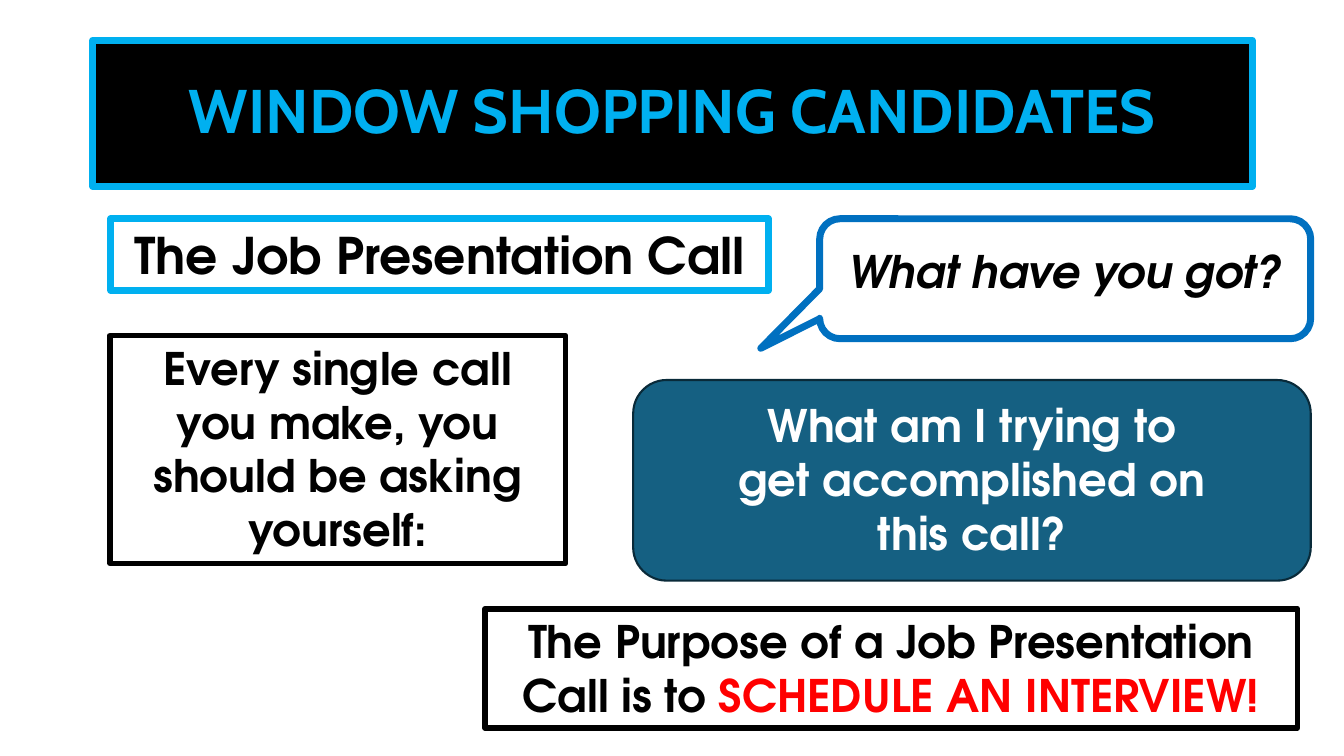
"""Build the slide on window shopping candidates and the job presentation call."""
from pptx import Presentation
from pptx.dml.color import RGBColor
from pptx.enum.shapes import MSO_SHAPE
from pptx.enum.text import MSO_ANCHOR, PP_ALIGN
from pptx.util import Pt

PX = 9144
RECTANGLE = MSO_SHAPE.RECTANGLE
ROUNDED = MSO_SHAPE.ROUNDED_RECTANGLE
CALLOUT = MSO_SHAPE.ROUNDED_RECTANGULAR_CALLOUT
TOP, MIDDLE = MSO_ANCHOR.TOP, MSO_ANCHOR.MIDDLE
CENTER = PP_ALIGN.CENTER

BLACK = RGBColor(0x00, 0x00, 0x00)
WHITE = RGBColor(0xFF, 0xFF, 0xFF)
RED = RGBColor(0xFF, 0x00, 0x00)
SKY = RGBColor(0x00, 0xB0, 0xF0)
BLUE = RGBColor(0x00, 0x70, 0xC0)
TEAL = RGBColor(0x15, 0x60, 0x82)
DARK_TEAL = RGBColor(0x09, 0x2A, 0x39)

BODY_FONT = "TeX Gyre Adventor"

deck = Presentation()
deck.slide_width, deck.slide_height = 1333 * PX, 750 * PX
page = deck.slides.add_slide(deck.slide_layouts[6])


def add_panel(kind, place, line, width, fill=None):
    panel = page.shapes.add_shape(kind, *(length * PX for length in place))
    panel.shadow.inherit = False
    panel.line.color.rgb = line
    panel.line.width = Pt(width)
    if fill is None:
        panel.fill.background()
    else:
        panel.fill.solid()
        panel.fill.fore_color.rgb = fill
    return panel


def write(box, *pieces, size=32, font=BODY_FONT, italic=False, anchor=TOP, spacing=1.0):
    frame = box.text_frame
    frame.word_wrap = True
    frame.vertical_anchor = anchor
    para = frame.paragraphs[0]
    para.alignment = CENTER
    para.line_spacing = spacing
    for text, color in pieces:
        span = para.add_run()
        span.text = text
        span.font.name = font
        span.font.size = Pt(size)
        span.font.bold = True
        span.font.italic = italic
        span.font.color.rgb = color


title = add_panel(RECTANGLE, (92, 40, 1150, 145), SKY, 5, fill=BLACK)
write(title, ("WINDOW SHOPPING CANDIDATES", SKY), size=44, font="Cabin",
      anchor=MIDDLE, spacing=0.9)

topic = add_panel(RECTANGLE, (110, 217, 652, 71), SKY, 5)
write(topic, ("The Job Presentation Call", BLACK), size=36)

prompt = add_panel(RECTANGLE, (109, 333, 452, 226), BLACK, 4)
write(prompt, ("Every single call you make, you should be asking yourself:", BLACK))

purpose = add_panel(RECTANGLE, (481, 604, 806, 118), BLACK, 4)
write(purpose, ("The Purpose of a Job Presentation Call is to ", BLACK),
      ("SCHEDULE AN INTERVIEW!", RED))

bubble = add_panel(CALLOUT, (813, 217, 487, 119), BLUE, 5)
for index, value in enumerate((-0.62, 0.58, 0.17)):
    bubble.adjustments[index] = value

add_panel(ROUNDED, (628, 377, 672, 199), DARK_TEAL, 1.5, fill=TEAL)

quote = page.shapes.add_textbox(813 * PX, 237 * PX, 487 * PX, 64 * PX)
write(quote, ("What have you got?", BLACK), italic=True)

question = page.shapes.add_textbox(719 * PX, 390 * PX, 490 * PX, 172 * PX)
write(question, ("What am I trying to get accomplished on this call?", WHITE))

deck.save("out.pptx")
